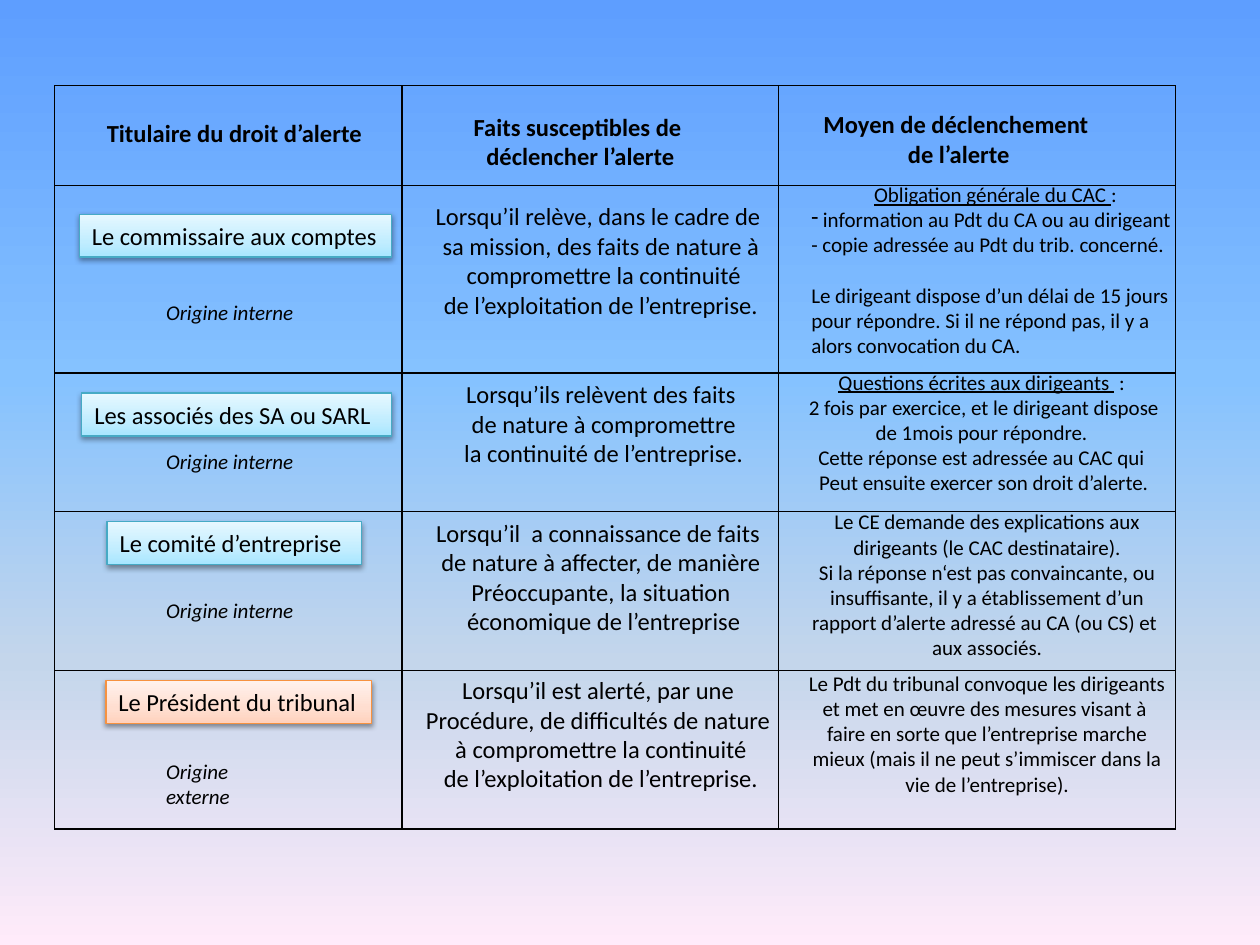
from dataclasses import dataclass

from lxml.etree import SubElement
from pptx import Presentation
from pptx.dml.color import RGBColor
from pptx.enum.shapes import MSO_CONNECTOR as Connector, MSO_SHAPE as Shape
from pptx.enum.text import MSO_AUTO_SIZE as AutoSize, PP_ALIGN as Align
from pptx.oxml.ns import qn
from pptx.util import Inches, Pt


@dataclass(frozen=True)
class Theme:
    font: str = "Calibri"
    ink: str = "000000"
    main_size: int = 14
    small_size: int = 12
    rule_width: float = 0.75
    sky: tuple = ((0, "5E9EFF"), (40, "85C2FF"), (70, "C4D6EB"), (100, "FFEBFA"))
    internal: tuple = ((0, "A7E6FF"), (35, "C1EDFF"), (100, "E7F8FF"))
    internal_line: str = "46AAC5"
    external: tuple = ((0, "FFD2BD"), (35, "FFDED0"), (100, "FFF2ED"))
    external_line: str = "F69240"


THEME = Theme()


@dataclass
class Alert:
    """One holder of the right; tops are offsets inside the row, in inches."""
    holder: str
    tag_box: tuple       # left, top, width
    origin: str
    origin_top: float
    facts: list
    facts_top: float
    facts_width: float
    means: list
    means_box: tuple     # left, top, width, height
    heading: tuple = ()  # underlined part, rest of the line
    listed: bool = False


COLUMNS = [0.43, 3.19, 6.18, 9.33]
ROWS = [0.68, 1.47, 2.96, 4.06, 5.32, 6.58]

# Text, left and top inside the column, width, height, alignment
HEADERS = [
    (["Titulaire du droit d’alerte"], 0.32, 0.21, 2.24, 0.34, Align.LEFT),
    (["Faits susceptibles de", " déclencher l’alerte"], 0.46, 0.16, 1.87, 0.57, Align.CENTER),
    (["Moyen de déclenchement ", "de l’alerte"], 0.25, 0.14, 2.36, 0.57, Align.CENTER),
]

ALERTS = [
    Alert("Le commissaire aux comptes", (0.2, 0.23, 2.48), "Origine interne", 0.86,
          ["Lorsqu’il relève, dans le cadre de ", "sa mission, des faits de nature à",
           " compromettre la continuité", "de l’exploitation de l’entreprise."], 0.08, 2.85,
          [" information au Pdt du CA ou au dirigeant ",
           "- copie adressée au Pdt du trib. concerné.",
           "Le dirigeant dispose d’un délai de 15 jours",
           "pour répondre. Si il ne répond pas, il y a ",
           "alors convocation du CA."], (0.16, -0.08, 3.12, 1.51),
          ("Obligation générale du CAC ", ":"), listed=True),
    Alert("Les associés des SA ou SARL", (0.22, 0.16, 2.46), "Origine interne", 0.55,
          ["Lorsqu’ils relèvent des faits", " de nature à compromettre",
           " la continuité de l’entreprise."], 0, 2.49,
          ["2 fois par exercice, et le dirigeant dispose", "de 1mois pour répondre. ",
           "Cette réponse est adressée au CAC qui ",
           "Peut ensuite exercer son droit d’alerte."], (0.03, -0.08, 3.2, 1.31),
          ("Questions écrites aux dirigeants ", " : ")),
    Alert("Le comité d’entreprise", (0.42, 0.08, 2.02), "Origine interne", 0.63,
          ["Lorsqu’il  a connaissance de faits ", "de nature à affecter, de manière",
           "Préoccupante, la situation", " économique de l’entreprise"], 0, 2.84,
          ["Le CE demande des explications aux dirigeants (le CAC destinataire).",
           "Si la réponse n‘est pas convaincante, ou insuffisante, il y a établissement "
           "d’un rapport d’alerte adressé au CA (ou CS) et ",
           "aux associés."], (0.08, -0.07, 3.15, 1.51)),
    Alert("Le Président du tribunal", (0.41, 0.08, 2.11), "Origine externe", 0.65,
          ["Lorsqu’il est alerté, par une ", "Procédure, de difficultés de nature ",
           "à compromettre la continuité", "de l’exploitation de l’entreprise."], -0.01, 3.01,
          ["Le Pdt du tribunal convoque les dirigeants et met en œuvre des mesures visant à ",
           "faire en sorte que l’entreprise marche mieux (mais il ne peut s’immiscer dans la "
           "vie de l’entreprise)."], (0.08, -0.05, 3.15, 1.31)),
]


def rgb(value):
    return RGBColor.from_string(value)


def set_gradient(fill, owner, stops, angle):
    fill.gradient()
    fill.gradient_angle = angle
    stop_list = next(owner.iter(qn("a:gsLst")))
    for stop in list(stop_list):
        stop_list.remove(stop)
    for position, color in stops:
        stop = SubElement(stop_list, qn("a:gs"), pos=str(position * 1000))
        SubElement(stop, qn("a:srgbClr"), val=color)


def write(frame, lines, size, align, wrap=False, **style):
    """Fill a frame, one paragraph a line; a tuple is an underlined part and the rest."""
    frame.word_wrap = wrap
    frame.auto_size = AutoSize.SHAPE_TO_FIT_TEXT
    for index, line in enumerate(lines):
        paragraph = frame.add_paragraph() if index else frame.paragraphs[0]
        paragraph.alignment = align
        font = paragraph.font
        font.name, font.size = THEME.font, Pt(size)
        font.color.rgb = rgb(THEME.ink)
        for name, value in style.items():
            setattr(font, name, value)
        parts = line if isinstance(line, tuple) else (line,)
        for part in parts:
            paragraph.add_run().text = part
        if len(parts) > 1:
            paragraph.runs[0].font.underline = True


def add_text(slide, box, lines, size, align, **style):
    frame = slide.shapes.add_textbox(*map(Inches, box)).text_frame
    write(frame, lines, size, align, **style)
    return frame


def add_rule(slide, x1, y1, x2, y2):
    rule = slide.shapes.add_connector(Connector.STRAIGHT, *map(Inches, (x1, y1, x2, y2)))
    rule.line.color.rgb = rgb(THEME.ink)
    rule.line.width = Pt(THEME.rule_width)
    SubElement(rule._element.spPr, qn("a:effectLst"))


def add_tag(slide, box, label, external):
    tag = slide.shapes.add_shape(Shape.RECTANGLE, *map(Inches, box))
    set_gradient(tag.fill, tag._element.spPr, THEME.external if external else THEME.internal, 90)
    tag.line.color.rgb = rgb(THEME.external_line if external else THEME.internal_line)
    tag.line.width = Pt(THEME.rule_width)
    tag.shadow.inherit = False
    effects = tag._element.spPr.find(qn("a:effectLst"))
    shadow = SubElement(effects, qn("a:outerShdw"), blurRad=str(Pt(3.1)), dist=str(Pt(1.6)),
                        dir="5400000", rotWithShape="0")
    color = SubElement(shadow, qn("a:srgbClr"), val=THEME.ink)
    SubElement(color, qn("a:alpha"), val="38000")
    write(tag.text_frame, [label], THEME.main_size, Align.LEFT)


def format_list(paragraphs):
    """Justify the lines under the heading, dash the first, set the reply rule apart."""
    for paragraph in paragraphs:
        paragraph.alignment = Align.JUSTIFY
    SubElement(paragraphs[0]._p.get_or_add_pPr(), qn("a:buChar"), char="-")
    # The bullet must come before the paragraph's default font
    properties = paragraphs[0]._p.pPr
    properties.insert(0, properties.find(qn("a:buChar")))
    paragraphs[2].space_before = Pt(THEME.small_size * 1.22)


def add_grid(slide):
    for x in COLUMNS:
        add_rule(slide, x, ROWS[0], x, ROWS[-1])
    for y in ROWS:
        add_rule(slide, COLUMNS[0], y, COLUMNS[-1], y)


def add_header(slide, top):
    for column, (lines, left, down, width, height, align) in zip(COLUMNS, HEADERS):
        add_text(slide, (column + left, top + down, width, height), lines,
                 THEME.main_size, align, bold=True)


def add_alert(slide, top, alert):
    holder_x, facts_x, means_x, _ = COLUMNS

    # Holder and origin
    left, down, width = alert.tag_box
    add_tag(slide, (holder_x + left, top + down, width, 0.34), alert.holder,
            alert.origin.endswith("externe"))
    add_text(slide, (holder_x + 0.79, top + alert.origin_top, 1.23, 0.3), [alert.origin],
             THEME.small_size, Align.LEFT, italic=True)

    # Facts, centred on one axis
    facts_left = facts_x + 1.58 - alert.facts_width / 2
    facts_height = 0.1 + 0.235 * len(alert.facts)
    add_text(slide, (facts_left, top + alert.facts_top, alert.facts_width, facts_height),
             alert.facts, THEME.main_size, Align.CENTER)

    # Means of raising the alert
    left, down, width, height = alert.means_box
    lines = ([alert.heading] if alert.heading else []) + alert.means
    frame = add_text(slide, (means_x + left, top + down, width, height), lines,
                     THEME.small_size, Align.CENTER, wrap=not alert.listed)
    if alert.listed:
        format_list(frame.paragraphs[1:])


def main():
    deck = Presentation()
    deck.slide_width, deck.slide_height = Inches(10), Inches(7.5)
    slide = deck.slides.add_slide(deck.slide_layouts[6])
    set_gradient(slide.background.fill, slide._element, THEME.sky, 270)
    add_grid(slide)
    add_header(slide, ROWS[0])
    for top, alert in zip(ROWS[1:], ALERTS):
        add_alert(slide, top, alert)
    deck.save("out.pptx")


if __name__ == "__main__":
    main()
